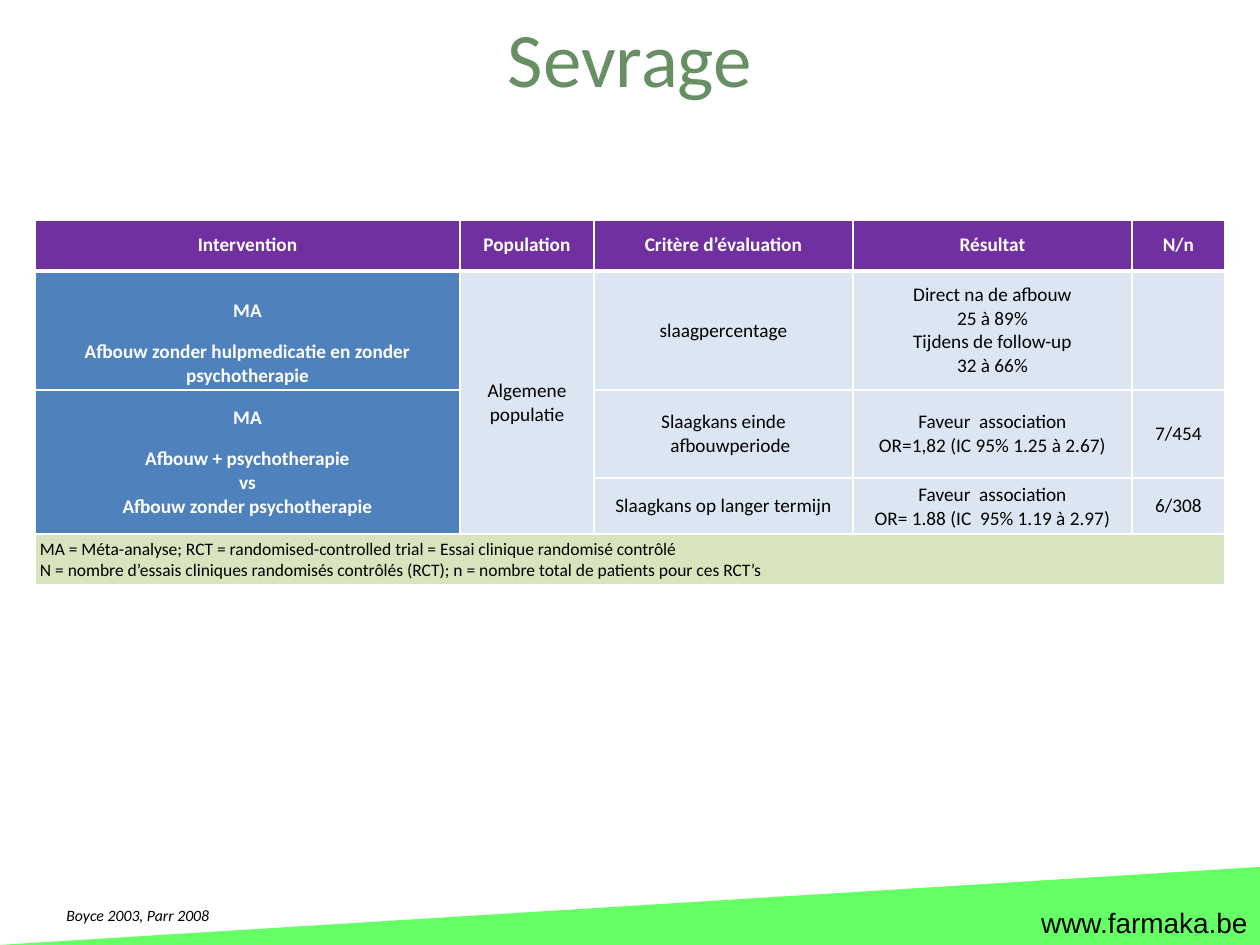
from lxml import etree
from pptx import Presentation
from pptx import util as u
from pptx.dml.color import RGBColor
from pptx.enum import shapes, text
from pptx.oxml.ns import qn

PX = u.Inches(1) // 126
HUES = {"title": "688F63", "band": "66FF66", "head": "7030A0", "side": "4F81BD",
        "body": "DCE6F2", "note": "D7E4BD", "white": "FFFFFF", "black": "000000"}
LEFT, MID, RIGHT = text.PP_ALIGN.LEFT, text.PP_ALIGN.CENTER, text.PP_ALIGN.RIGHT

COLS = [425, 134, 259, 279, 93]
ROWS = [52, 119, 88, 56, 50]
GRID = [
    ["Intervention", "Population", "Critère d’évaluation", "Résultat", "N/n"],
    ["MA\nAfbouw zonder hulpmedicatie en zonder psychotherapie",
     "Algemene populatie", "slaagpercentage",
     "Direct na de afbouw\n25 à 89%\nTijdens de follow-up\n32 à 66%", ""],
    ["MA\nAfbouw + psychotherapie\nvs\nAfbouw zonder psychotherapie", "",
     "Slaagkans einde afbouwperiode",
     "Faveur  association\nOR=1,82 (IC 95% 1.25 à 2.67)", "7/454"],
    ["", "", "Slaagkans op langer termijn",
     "Faveur  association\nOR= 1.88 (IC  95% 1.19 à 2.97)", "6/308"],
    ["MA = Méta-analyse; RCT = randomised-controlled trial = Essai clinique "
     "randomisé contrôlé\nN = nombre d’essais cliniques randomisés contrôlés "
     "(RCT); n = nombre total de patients pour ces RCT’s", "", "", "", ""],
]
SPANS = [((1, 1), (3, 1)), ((2, 0), (3, 0)), ((4, 0), (4, 4))]


def hue(name):
    return RGBColor.from_string(HUES[name])


def style(frame, size, color, align, face="Calibri", bold=False, italic=False):
    for para in frame.paragraphs:
        para.alignment = align
        font = para.font
        font.size, font.name = u.Pt(size), face
        font.bold, font.italic = bold, italic
        for run in para.runs:
            run.font.size, run.font.name = u.Pt(size), face
            run.font.bold, run.font.italic = bold, italic
            run.font.color.rgb = hue(color)


def label(slide, box, words, inset, *looks, **more):
    frame = slide.shapes.add_textbox(*(n * PX for n in box)).text_frame
    frame.word_wrap = True
    frame.margin_top = inset * PX
    frame.text = words
    style(frame, *looks, **more)


def edge(cell, thick):
    """Draw white borders; thick names the sides that are 3 pt wide."""
    props = cell._tc.get_or_add_tcPr()
    for spot, side in enumerate("LRTB"):
        line = etree.Element(qn("a:ln" + side),
                             w=str(u.Pt(3 if side in thick else 1)))
        fill = etree.SubElement(line, qn("a:solidFill"))
        etree.SubElement(fill, qn("a:srgbClr"), val=HUES["white"])
        props.insert(spot, line)


def kind(row, col):
    if row == 0:
        return "head"
    if row == len(ROWS) - 1:
        return "note"
    return "body" if col else "side"


def fill_cell(cell, row, col, words):
    part = kind(row, col)
    cell.fill.solid()
    cell.fill.fore_color.rgb = hue(part)
    edge(cell, {0: "TB", 1: "T", 4: "B"}.get(row, ""))
    cell.vertical_anchor = text.MSO_ANCHOR.MIDDLE
    cell.margin_left = cell.margin_right = 5 * PX
    cell.margin_top = cell.margin_bottom = 5 * PX
    frame = cell.text_frame
    frame.text = words
    bold = part in ("head", "side")
    note = part == "note"
    style(frame, 10 if note else 11, "white" if bold else "black",
          LEFT if note else MID, bold=bold)
    # Gap under "MA", and the low start of the first study
    if part == "side" and words:
        frame.paragraphs[1].space_before = u.Pt(10)
        if row == 1:
            cell.margin_top, cell.margin_bottom = 28 * PX, 3 * PX
    # Hanging indent of the criteria
    if part == "body" and col == 2:
        props = frame.paragraphs[0]._p.get_or_add_pPr()
        props.set("marL", str(14 * PX))
        props.set("indent", str(-14 * PX))


def study_table(slide, left, top):
    table = slide.shapes.add_table(len(ROWS), len(COLS), left * PX, top * PX,
                                   sum(COLS) * PX, sum(ROWS) * PX).table
    for col, width in zip(table.columns, COLS):
        col.width = width * PX
    for row, height in zip(table.rows, ROWS):
        row.height = height * PX
    for r, line in enumerate(GRID):
        for c, words in enumerate(line):
            fill_cell(table.cell(r, c), r, c, words)
    for start, end in SPANS:
        table.cell(*start).merge(table.cell(*end))


def footer(slide, left, top, width, height):
    # Green wedge rising to the right
    wedge = slide.shapes.add_shape(shapes.MSO_SHAPE.RIGHT_TRIANGLE, left * PX,
                                   top * PX, width * PX, height * PX)
    wedge.shadow.inherit = False
    wedge.fill.solid()
    wedge.fill.fore_color.rgb = hue("band")
    wedge.line.fill.background()
    wedge._element.spPr.get_or_add_xfrm().set("flipH", "1")
    # Site address and references
    label(slide, (left + width - 256, top + 33, 256, 45), "www.farmaka.be", 6,
          16, "black", RIGHT, face="Arial")
    label(slide, (left + 54, top + 33, 850, 32), "Boyce 2003, Parr 2008", 6,
          9, "black", LEFT, italic=True)


def main():
    deck = Presentation()
    deck.slide_width, deck.slide_height = 1260 * PX, 945 * PX
    slide = deck.slides.add_slide(deck.slide_layouts[6])
    footer(slide, 0, 867, 1260, 78)
    label(slide, (0, 0, 1260, 157), "Sevrage", 10, 44, "title", MID)
    study_table(slide, 35, 219)
    deck.save("out.pptx")


if __name__ == "__main__":
    main()
